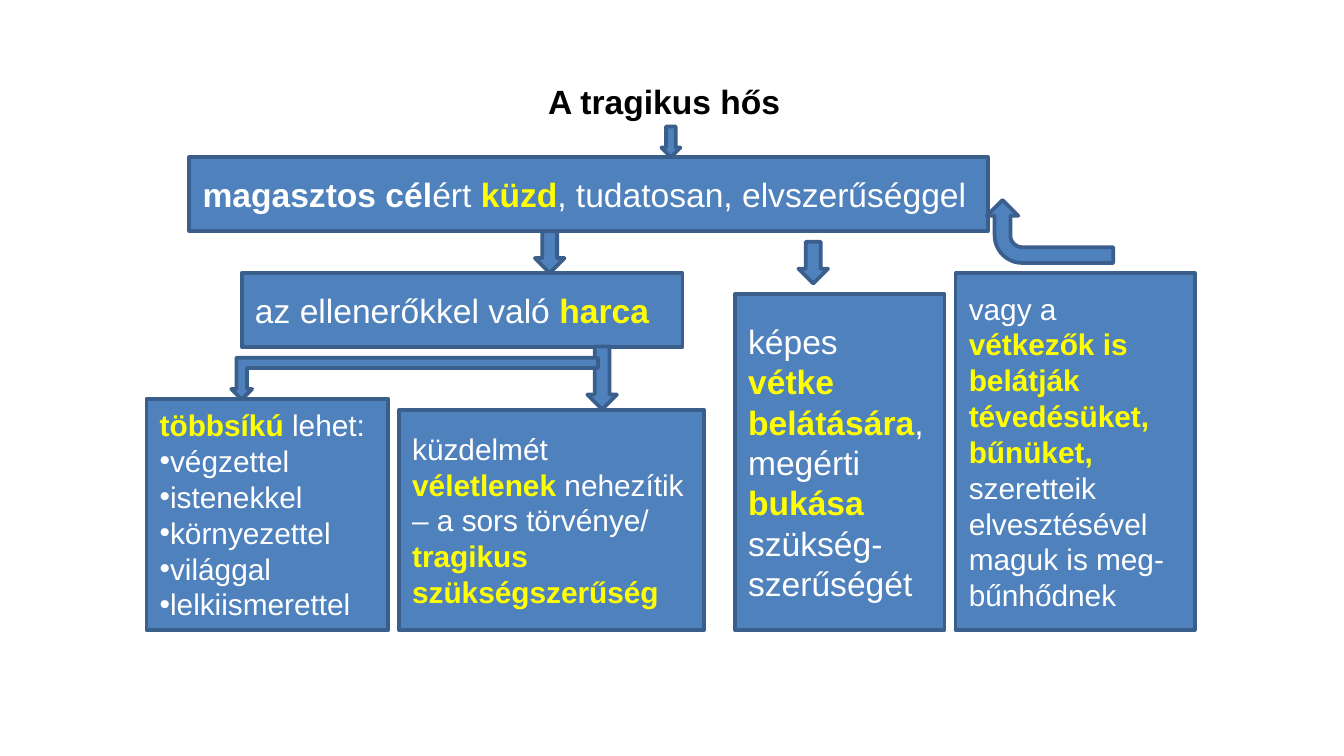
from lxml import etree
from pptx import Presentation
from pptx.dml.color import RGBColor
from pptx.enum.shapes import MSO_SHAPE
from pptx.enum.text import MSO_ANCHOR, MSO_AUTO_SIZE, PP_ALIGN
from pptx.oxml.ns import qn
from pptx.util import Cm, Pt

RECT = MSO_SHAPE.RECTANGLE
DOWN = MSO_SHAPE.DOWN_ARROW
BENT_UP = MSO_SHAPE.BENT_UP_ARROW
BENT = MSO_SHAPE.BENT_ARROW
MIDDLE = MSO_ANCHOR.MIDDLE
LEFT = PP_ALIGN.LEFT

BLUE = RGBColor(0x4F, 0x81, 0xBD)
EDGE = RGBColor(0x3A, 0x5F, 0x8C)
WHITE = RGBColor(0xFF, 0xFF, 0xFF)
YELLOW = RGBColor(0xFF, 0xFF, 0x00)
BLACK = RGBColor(0x00, 0x00, 0x00)

FONT = "Arial"
PLAIN = (WHITE, False)
STRONG = (WHITE, True)
KEY = (YELLOW, True)
HEADING = (BLACK, True)


def add_runs(p, runs, size):
    """Fill a paragraph from (text, (colour, bold)) pairs."""
    p.alignment = LEFT
    for text, (color, bold) in runs:
        r = p.add_run()
        r.text = text
        r.font.name = FONT
        r.font.size = Pt(size)
        r.font.bold = bold
        r.font.color.rgb = color


def add_bullet(p):
    pPr = p._p.get_or_add_pPr()
    etree.SubElement(pPr, qn("a:buFont")).set("typeface", FONT)
    etree.SubElement(pPr, qn("a:buChar")).set("char", "•")


def add_block(s, kind, x, y, w, h, rotation=0):
    """Add a blue shape; lengths are in centimetres."""
    sp = s.shapes.add_shape(kind, Cm(x), Cm(y), Cm(w), Cm(h))
    sp.shadow.inherit = False
    sp.fill.solid()
    sp.fill.fore_color.rgb = BLUE
    sp.line.color.rgb = EDGE
    sp.line.width = Pt(2)
    sp.rotation = rotation
    return sp


def add_box(s, x, y, w, h, runs, size, bullets=()):
    tf = add_block(s, RECT, x, y, w, h).text_frame
    tf.word_wrap = True
    tf.vertical_anchor = MIDDLE
    add_runs(tf.paragraphs[0], runs, size)
    for item in bullets:
        p = tf.add_paragraph()
        add_runs(p, [(item, PLAIN)], size)
        add_bullet(p)


def draw_goal(s, x, y, w, h):
    """Title with an arrow to the hero's goal below it."""
    sp = s.shapes.add_textbox(Cm(x + 6.53), Cm(y), Cm(4.95), Cm(1.02))
    tf = sp.text_frame
    tf.word_wrap = False
    tf.auto_size = MSO_AUTO_SIZE.SHAPE_TO_FIT_TEXT
    add_runs(tf.paragraphs[0], [("A tragikus hős", HEADING)], 18)

    add_block(s, DOWN, x + 8.92, y + 0.99, 0.36, 0.58)
    add_box(s, x, y + 1.57, w, h - 1.57, [
        ("magasztos cél", STRONG), ("ért ", PLAIN), ("küzd", KEY),
        (", tudatosan, elvszerűséggel", PLAIN)], 18)


def draw_struggle(s, x, y, w, h):
    """The fight and its two branches."""
    add_block(s, DOWN, x + 7.34, y, 0.56, 0.79)
    add_box(s, x + 1.8, y + 0.79, 8.33, 1.4, [
        ("az ellenerőkkel való ", PLAIN), ("harca", KEY)], 18)
    add_box(s, x, y + 3.17, 4.57, h - 3.17, [
        ("többsíkú ", KEY), ("lehet:", PLAIN)], 16,
        ["végzettel", "istenekkel", "környezettel", "világgal",
         "lelkiismerettel"])
    add_box(s, x + 4.77, y + 3.38, w - 4.77, h - 3.38, [
        ("küzdelmét ", PLAIN), ("véletlenek ", KEY),
        ("nehezítik – a sors törvénye/ ", PLAIN),
        ("tragikus szükségszerűség", KEY)], 16)
    add_block(s, DOWN, x + 8.33, y + 2.18, 0.56, 1.19)
    add_block(s, BENT_UP, x + 1.6, y + 2.39, 6.93, 0.79, rotation=180)


def draw_insight(s, x, y, w, h):
    """The hero's insight, and the others' insight leading back up."""
    add_block(s, DOWN, x + 1.2, y, 0.56, 0.79)
    add_box(s, x, y + 0.99, 3.96, h - 0.99, [
        ("képes ", PLAIN), ("vétke belátására", KEY), (", megérti ", PLAIN),
        ("bukása", KEY), (" szükség-szerűségét", PLAIN)], 18)
    add_box(s, x + 4.17, y + 0.59, w - 4.17, h - 0.59, [
        ("vagy a ", PLAIN),
        ("vétkezők is belátják tévedésüket, bűnüket,", KEY),
        (" szeretteik elvesztésével maguk is meg-bűnhődnek", PLAIN)], 16)
    add_block(s, BENT, x + 5.36, y - 1.39, 1.19, 2.39, rotation=270)


def main():
    prs = Presentation()
    prs.slide_width = Cm(25.4)
    prs.slide_height = Cm(14.29)
    s = prs.slides.add_slide(prs.slide_layouts[6])
    draw_goal(s, 3.58, 1.4, 15.09, 2.97)
    draw_struggle(s, 2.77, 4.37, 10.54, 7.54)
    draw_insight(s, 13.89, 4.57, 8.69, 7.34)
    prs.save("out.pptx")


if __name__ == "__main__":
    main()
